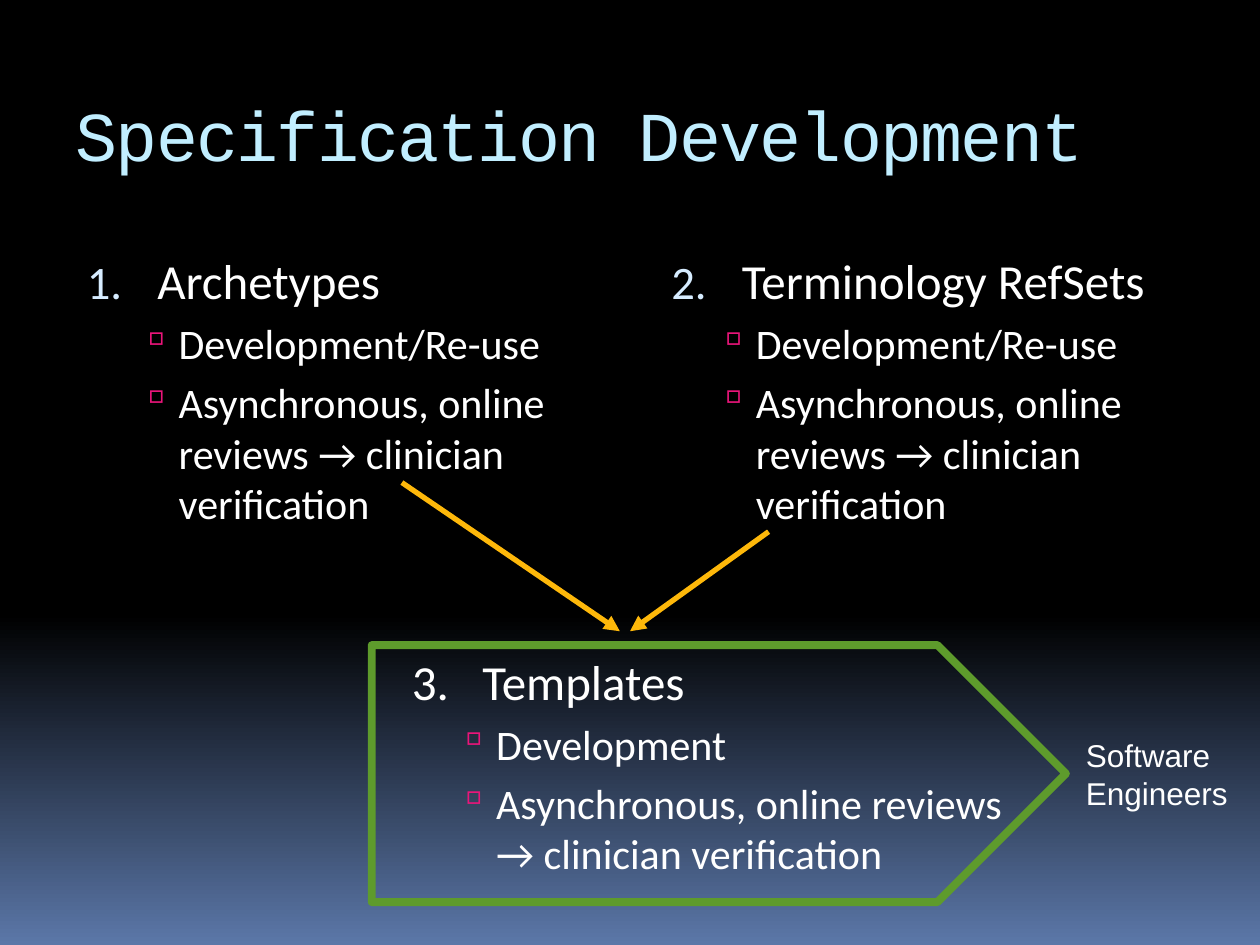
"""Build the Specification Development slide."""
from copy import deepcopy
from dataclasses import dataclass
from typing import NamedTuple, Optional

from lxml.etree import SubElement
from pptx import Presentation
from pptx.dml.color import RGBColor
from pptx.enum.shapes import MSO_CONNECTOR, MSO_SHAPE
from pptx.enum.text import MSO_ANCHOR, MSO_AUTO_SIZE, PP_ALIGN
from pptx.oxml.ns import qn
from pptx.util import Inches, Length, Pt

COLS, ROWS = 100, 75
WIDTH, HEIGHT = Inches(10), Inches(7.5)


@dataclass(frozen=True)
class Theme:
    night: str = "000000"
    dusk: str = "5B77A8"
    title: str = "C1EEFF"
    text: str = "FFFFFF"
    number: str = "D6ECFF"
    bullet: str = "EA157A"
    arrow: str = "FEB80A"
    frame: str = "5E9B2C"
    title_font: str = "Courier New"
    body_font: str = "Calibri"
    label_font: str = "Arial"
    title_size: float = 40
    head_size: float = 28
    item_size: float = 24
    label_size: float = 18


class Box(NamedTuple):
    col: float
    row: float
    cols: float
    rows: float


class Arrow(NamedTuple):
    col: float
    row: float
    end_col: float
    end_row: float


class Topic(NamedTuple):
    box: Box
    number: int
    head: str
    items: tuple[str, ...]
    number_color: Optional[str]
    margin: float
    before: float
    grow: bool


THEME = Theme()
REVIEWS = "Asynchronous, online reviews → clinician verification"
REUSE = ("Development/Re-use", REVIEWS)
BODY_COL, BODY_STEP = 5.1, 45.8
TITLE_BOX = Box(5, 5.6, 90, 10)
FRAME_BOX = Box(29.5, 51.2, 55.1, 20.4)
LABEL_BOX = Box(85.2, 57.9, 16.5, 7.1)
TOPICS = (
    Topic(Box(BODY_COL, 19.4, 44.2, 49.5), 1, "Archetypes", REUSE,
          THEME.number, 0.64, 7, False),
    Topic(Box(BODY_COL + BODY_STEP, 19.4, 44.2, 49.5), 2, "Terminology RefSets", REUSE,
          THEME.number, 0.7, 7, False),
    Topic(Box(30.3, 51.2, 51.2, 22.5), 3, "Templates", ("Development", REVIEWS),
          None, 0.7, 0, True),
)
ARROWS = (Arrow(31.9, 38.3, 49.2, 50.1), Arrow(61, 42.2, 50, 50.1))


def x(cols: float) -> Length:
    return Length(round(WIDTH * cols / COLS))


def y(rows: float) -> Length:
    return Length(round(HEIGHT * rows / ROWS))


def place(box: Box) -> tuple[Length, Length, Length, Length]:
    return x(box.col), y(box.row), x(box.cols), y(box.rows)


def add_run(p, text: str, font: str, size: float, color: str):
    r = p.add_run()
    r.text = text
    r.font.name, r.font.size = font, Pt(size)
    r.font.color.rgb = RGBColor.from_string(color)
    return r


def set_bullet(p, margin: float, hang: float, color: Optional[str], size: int,
               tag: str, **attrs: str) -> None:
    pPr = p._p.get_or_add_pPr()
    pPr.set("marL", str(Inches(margin)))
    pPr.set("indent", str(Inches(-hang)))
    if color:
        SubElement(SubElement(pPr, qn("a:buClr")), qn("a:srgbClr"), val=color)
    SubElement(pPr, qn("a:buSzPct"), val=str(size * 1000))
    SubElement(pPr, qn(tag), **attrs)


def paint_background(slide) -> None:
    fill = slide.background.fill
    fill.gradient()
    fill.gradient_angle = 270
    night, dusk = fill.gradient_stops
    night.color.rgb = RGBColor.from_string(THEME.night)
    night.position = 0
    dusk.color.rgb = RGBColor.from_string(THEME.dusk)
    dusk.position = 1
    first = next(slide.background._cSld.iter(qn("a:gs")))
    middle = deepcopy(first)
    middle.set("pos", "65000")
    first.addnext(middle)


def add_title(slide, text: str) -> None:
    sp = slide.shapes.title
    sp.left, sp.top, sp.width, sp.height = place(TITLE_BOX)
    tf = sp.text_frame
    tf.vertical_anchor = MSO_ANCHOR.MIDDLE
    p = tf.paragraphs[0]
    p.alignment = PP_ALIGN.LEFT
    r = add_run(p, text, THEME.title_font, THEME.title_size, THEME.title)
    r.font._element.set("spc", "-100")


def add_text_frame(slide, box: Box, grow: bool):
    tf = slide.shapes.add_textbox(*place(box)).text_frame
    tf.word_wrap = True
    tf.auto_size = MSO_AUTO_SIZE.SHAPE_TO_FIT_TEXT if grow else MSO_AUTO_SIZE.NONE
    return tf


def add_topic(slide, topic: Topic) -> None:
    tf = add_text_frame(slide, topic.box, topic.grow)
    p = tf.paragraphs[0]
    p.space_before = Pt(topic.before)
    set_bullet(p, topic.margin, 0.56, topic.number_color, 95 if topic.number_color else 100,
               "a:buAutoNum", type="arabicPeriod", startAt=str(topic.number))
    add_run(p, topic.head, THEME.body_font, THEME.head_size, THEME.text)
    for item in topic.items:
        p = tf.add_paragraph()
        p.level = 1
        p.space_before = Pt(0.2 * THEME.item_size)
        set_bullet(p, 0.81, 0.31, THEME.bullet, 90, "a:buChar", char="▫")
        add_run(p, item, THEME.body_font, THEME.item_size, THEME.text)


def add_arrow(slide, arrow: Arrow) -> None:
    line = slide.shapes.add_connector(
        MSO_CONNECTOR.STRAIGHT, x(arrow.col), y(arrow.row), x(arrow.end_col), y(arrow.end_row))
    line.line.color.rgb = RGBColor.from_string(THEME.arrow)
    line.line.width = Pt(3)
    SubElement(line.line._get_or_add_ln(), qn("a:tailEnd"), type="triangle")
    SubElement(line._element.spPr, qn("a:effectLst"))


def add_frame(slide, box: Box) -> None:
    sp = slide.shapes.add_shape(MSO_SHAPE.PENTAGON, *place(box))
    sp.shadow.inherit = False
    sp.fill.background()
    sp.line.color.rgb = RGBColor.from_string(THEME.frame)
    sp.line.width = Pt(4.5)


def main() -> None:
    prs = Presentation()
    prs.slide_width, prs.slide_height = WIDTH, HEIGHT
    s = prs.slides.add_slide(prs.slide_layouts[5])
    paint_background(s)
    add_title(s, "Specification Development")
    for topic in TOPICS:
        add_topic(s, topic)
    for arrow in ARROWS:
        add_arrow(s, arrow)
    add_frame(s, FRAME_BOX)
    tf = add_text_frame(s, LABEL_BOX, True)
    add_run(tf.paragraphs[0], "Software Engineers", THEME.label_font, THEME.label_size, THEME.text)
    prs.save("out.pptx")


if __name__ == "__main__":
    main()
